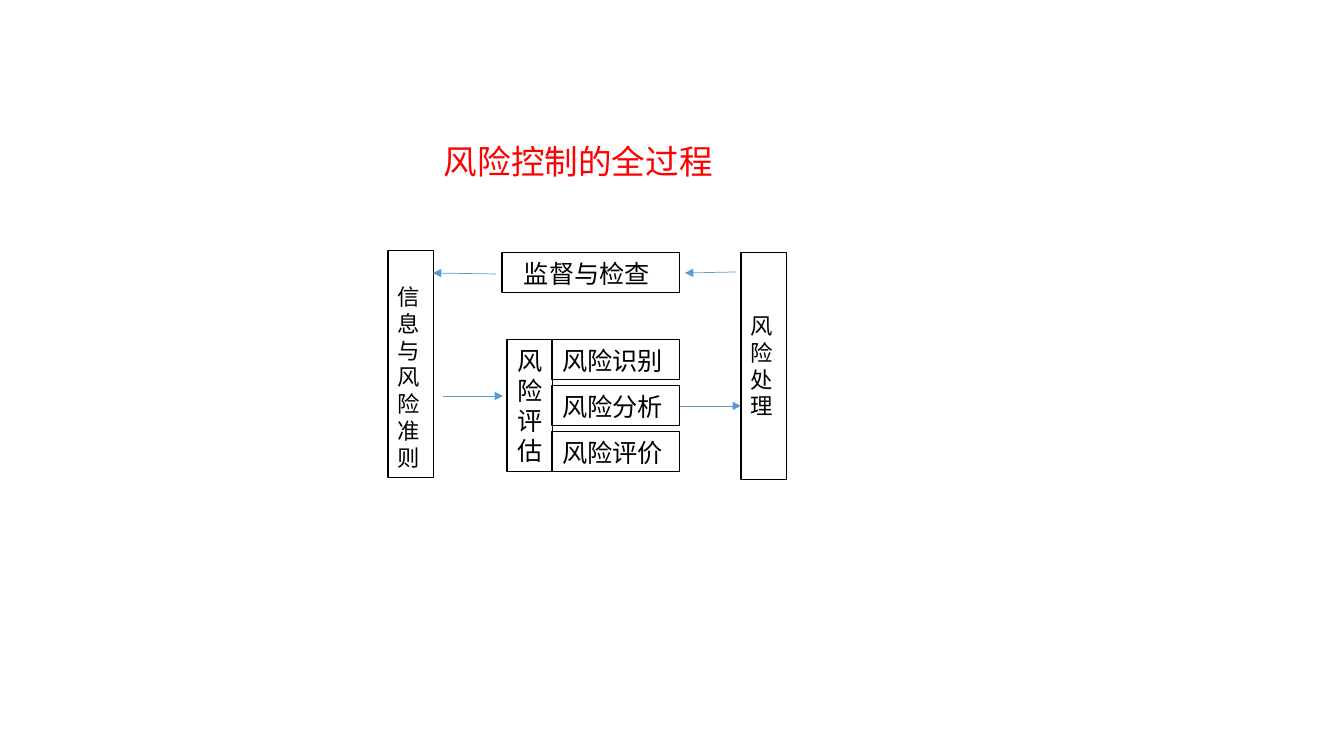
from dataclasses import dataclass
from typing import Optional

import pptx
import pptx.dml.color
import pptx.enum.shapes
import pptx.enum.text
import pptx.oxml
import pptx.oxml.ns
import pptx.util

BLACK = pptx.dml.color.RGBColor(0x00, 0x00, 0x00)
RED = pptx.dml.color.RGBColor(0xFF, 0x00, 0x00)
BLUE = pptx.dml.color.RGBColor(0x5B, 0x9B, 0xD5)
FONT = "Calibri"
EMU_PER_PX = 914400 / 100.8
SIDE_INSET = 10
TOP_INSET = 5
LINE_HEIGHT = 27
COLUMN_WIDTH = 46
COLUMN_HEIGHT = 227
ROW_HEIGHT = 40
STEP_TOP = 340
STEP_PITCH = 46
RIGHT_SIDE = 3


@dataclass
class Box:
    text: str
    left: int
    top: int
    width: int
    height: int
    size: int = 18
    inset_left: int = SIDE_INSET
    inset_top: int = TOP_INSET


@dataclass
class Arrow:
    start: tuple[int, int]
    end: tuple[int, int]
    source: Optional[str] = None


TITLE = Box("风险控制的全过程", 434, 121, 358, 86, 24)
STEPS = [
    Box(text, 552, STEP_TOP + row * STEP_PITCH, 128, ROW_HEIGHT)
    for row, text in enumerate(["风险识别", "风险分析", "风险评价"])
]
BOXES = [
    Box("信息与风险准则", 388, 251, COLUMN_WIDTH, COLUMN_HEIGHT, 16,
        inset_top=TOP_INSET + LINE_HEIGHT),
    Box("监督与检查", 502, 253, 178, ROW_HEIGHT, inset_left=22),
    Box("风险评估", 507, STEP_TOP, COLUMN_WIDTH, 132),
    *STEPS,
    Box("风险处理", 741, 253, COLUMN_WIDTH, COLUMN_HEIGHT, 16,
        inset_top=TOP_INSET + 2 * LINE_HEIGHT),
]
ARROWS = [
    Arrow((443, 396), (503, 396)),
    Arrow((496, 274), (433, 273)),
    Arrow((736, 272), (685, 273)),
    Arrow((680, 406), (741, 406), "风险分析"),
]


def px(length: int) -> pptx.util.Emu:
    return pptx.util.Emu(round(length * EMU_PER_PX))


def write_text(shape, box: Box, color: pptx.dml.color.RGBColor):
    frame = shape.text_frame
    frame.word_wrap = True
    frame.margin_left = px(box.inset_left)
    frame.margin_right = px(SIDE_INSET)
    frame.margin_top = px(box.inset_top)
    frame.margin_bottom = px(TOP_INSET)
    frame.vertical_anchor = pptx.enum.text.MSO_ANCHOR.TOP
    para = frame.paragraphs[0]
    para.alignment = pptx.enum.text.PP_ALIGN.LEFT
    span = para.add_run()
    span.text = box.text
    span.font.name = FONT
    span.font.size = pptx.util.Pt(box.size)
    span.font.color.rgb = color


def add_title(page, box: Box) -> None:
    shape = page.shapes.add_textbox(
        px(box.left), px(box.top), px(box.width), px(box.height))
    write_text(shape, box, RED)
    shape.text_frame.vertical_anchor = pptx.enum.text.MSO_ANCHOR.MIDDLE
    shape.text_frame.paragraphs[0].line_spacing = 0.9


def add_box(page, box: Box):
    shape = page.shapes.add_shape(
        pptx.enum.shapes.MSO_SHAPE.RECTANGLE,
        px(box.left), px(box.top), px(box.width), px(box.height))
    shape.shadow.inherit = False
    shape.fill.background()
    shape.line.color.rgb = BLACK
    shape.line.width = pptx.util.Pt(0.75)
    write_text(shape, box, BLACK)
    return shape


def add_arrow(page, arrow: Arrow, shapes: dict) -> None:
    connector = page.shapes.add_connector(
        pptx.enum.shapes.MSO_CONNECTOR.STRAIGHT,
        *map(px, arrow.start), *map(px, arrow.end))
    connector.line.color.rgb = BLUE
    connector.line.width = pptx.util.Pt(0.5)
    if arrow.source:
        connector.begin_connect(shapes[arrow.source], RIGHT_SIDE)
    line = connector.line._get_or_add_ln()
    head = pptx.oxml.parse_xml(
        f'<a:tailEnd {pptx.oxml.ns.nsdecls("a")} type="triangle"/>')
    line.append(head)
    effects = pptx.oxml.parse_xml(
        f'<a:effectLst {pptx.oxml.ns.nsdecls("a")}/>')
    line.addnext(effects)


def main() -> None:
    deck = pptx.Presentation()
    deck.slide_width = px(1344)
    deck.slide_height = px(756)
    page = deck.slides.add_slide(deck.slide_layouts[6])
    add_title(page, TITLE)
    shapes = {box.text: add_box(page, box) for box in BOXES}
    for arrow in ARROWS:
        add_arrow(page, arrow, shapes)
    deck.save("out.pptx")


if __name__ == "__main__":
    main()
